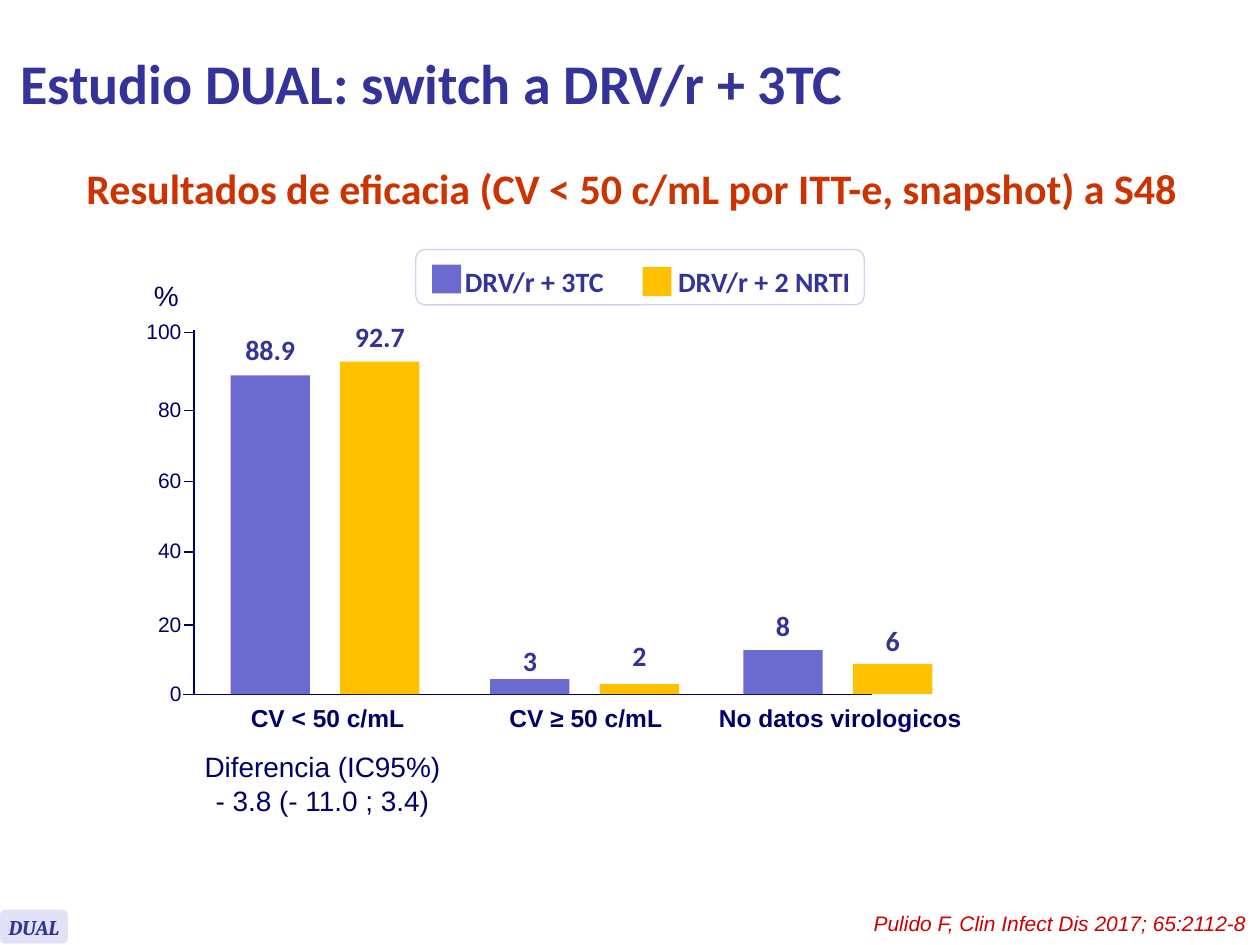
"""Builds the DUAL study slide with its drawn bar plot of efficacy at week 48."""
from pptx import Presentation
from pptx.dml.color import RGBColor
from pptx.enum.shapes import MSO_CONNECTOR as LINK, MSO_SHAPE as SHAPE
from pptx.enum.text import MSO_ANCHOR as ANCHOR, PP_ALIGN as ALIGN
from pptx.oxml.ns import qn
from pptx.util import Inches, Pt
from lxml.etree import SubElement

NAVY, BLUE, LILAC, GOLD = "000066", "333399", "6B6BCF", "FFC000"
BASE, AXIS, BAR, STEP = 5.51, 1.54, 0.63, 0.87
hue = RGBColor.from_string

deck = Presentation()
deck.slide_width, deck.slide_height = Inches(10), Inches(7.5)
slide = deck.slides.add_slide(deck.slide_layouts[5])
shapes = slide.shapes


def write(shape, text, size, color, face="Arial", bold=False, italic=False,
          align=ALIGN.CENTER, wrap=False, inset=True):
    """Fills a shape with evenly styled lines of text."""
    frame = shape.text_frame
    frame.text, frame.word_wrap = text, wrap
    if not inset:
        frame.margin_left = frame.margin_right = 0
        frame.margin_top = frame.margin_bottom = 0
    for para in frame.paragraphs:
        para.alignment, font = align, para.font
        font.name, font.size, font.bold, font.italic = face, Pt(size), bold, italic
        font.color.rgb = hue(color)
    return frame


def block(kind, box, fill, edge=None):
    """Draws a flat filled shape."""
    shape = shapes.add_shape(kind, *map(Inches, box))
    shape.shadow.inherit = False
    shape.fill.solid()
    shape.fill.fore_color.rgb = hue(fill)
    if edge:
        shape.line.color.rgb, shape.line.width = hue(edge), Pt(0.75)
    else:
        shape.line.fill.background()
    return shape


title = shapes.title
title.left, title.top, title.width, title.height = map(Inches, (0.06, 0.05, 8.96, 1.21))
frame = write(title, "Estudio DUAL: switch a DRV/r + 3TC", 32, BLUE, "Calibri", True,
              align=ALIGN.LEFT, wrap=True)
frame.vertical_anchor = ANCHOR.MIDDLE

head = shapes.add_textbox(*map(Inches, (0.25, 1.43, 9.53, 0.35)))
frame = write(head, "Resultados de eficacia (CV < 50 c/mL por ITT-e, snapshot) a S48",
              24, "CC3300", "Calibri", True, wrap=True)
frame.paragraphs[0].line_spacing = Pt(15.2)

block(SHAPE.ROUNDED_RECTANGLE, (3.3, 1.98, 3.56, 0.44), "FFFFFF", "D0D0F0")
for name, fill, x, y, left, wide in (("DRV/r + 3TC", LILAC, 3.43, 2.1, 3.58, 1.32),
                                     ("DRV/r + 2 NRTI", GOLD, 5.1, 2.12, 5.27, 1.59)):
    block(SHAPE.RECTANGLE, (x, y, 0.23, 0.23), fill)
    key = shapes.add_textbox(*map(Inches, (left, 2.05, wide, 0.37)))
    write(key, name, 16, BLUE, "Calibri", True)

ticks = {0: BASE, 20: 4.96, 40: 4.38, 60: 3.82, 80: 3.26, 100: 2.64}
lines = [(AXIS - 0.09, BASE, 6.92, BASE), (AXIS, 2.62, AXIS, BASE)]
lines += [(AXIS - 0.08, y, AXIS, y) for mark, y in ticks.items() if mark]
for ends in lines:
    line = shapes.add_connector(LINK.STRAIGHT, *map(Inches, ends))
    line.line.color.rgb, line.line.width = hue(NAVY), Pt(0.75)
    SubElement(line._element.spPr, qn("a:effectLst"))
for mark, y in ticks.items():
    tick = shapes.add_textbox(*map(Inches, (1.15, y - 0.11, 0.29, 0.2)))
    write(tick, str(mark), 12, NAVY, align=ALIGN.RIGHT, inset=False)

groups = (
    ("CV < 50 c/mL", 1.83, 2.6, (("88.9", 2.53, 2.64), ("92.7", 2.64, 2.54))),
    ("CV ≥ 50 c/mL", 3.89, 4.65, (("3", 0.12, 5.11), ("2", 0.08, 5.07))),
    ("No datos virologicos", 5.9, 6.67, (("8", 0.35, 4.83), ("6", 0.24, 4.95))),
)
for name, left, mid, bars in groups:
    for i, (value, tall, top) in enumerate(bars):
        x = left + i * STEP
        block(SHAPE.RECTANGLE, (x, BASE - tall, BAR, tall), (LILAC, GOLD)[i])
        tag = shapes.add_textbox(*map(Inches, (x, top, BAR, 0.27)))
        write(tag, value, 16, BLUE, "Calibri", True, inset=False)
    label = shapes.add_textbox(*map(Inches, (mid - 1.07, 5.53, 2.14, 0.34)))
    write(label, name, 14, NAVY, bold=True)

for text, box in (("%", (1.12, 2.16, 0.4, 0.37)),
                  ("Diferencia (IC95%)\n- 3.8 (- 11.0 ; 3.4)", (1.51, 5.9, 2.1, 0.64))):
    write(shapes.add_textbox(*map(Inches, box)), text, 16, NAVY)

badge = block(SHAPE.ROUNDED_RECTANGLE, (0, 7.22, 0.54, 0.27), "E2E2F6")
frame = write(badge, "DUAL", 12, BLUE, "Cambria", True, True)
frame.vertical_anchor = ANCHOR.MIDDLE
cite = shapes.add_textbox(*map(Inches, (5.48, 7.18, 4.51, 0.3)))
write(cite, "Pulido F, Clin Infect Dis 2017; 65:2112-8", 12, "CC0000", italic=True,
      align=ALIGN.RIGHT, wrap=True)

deck.save("out.pptx")
